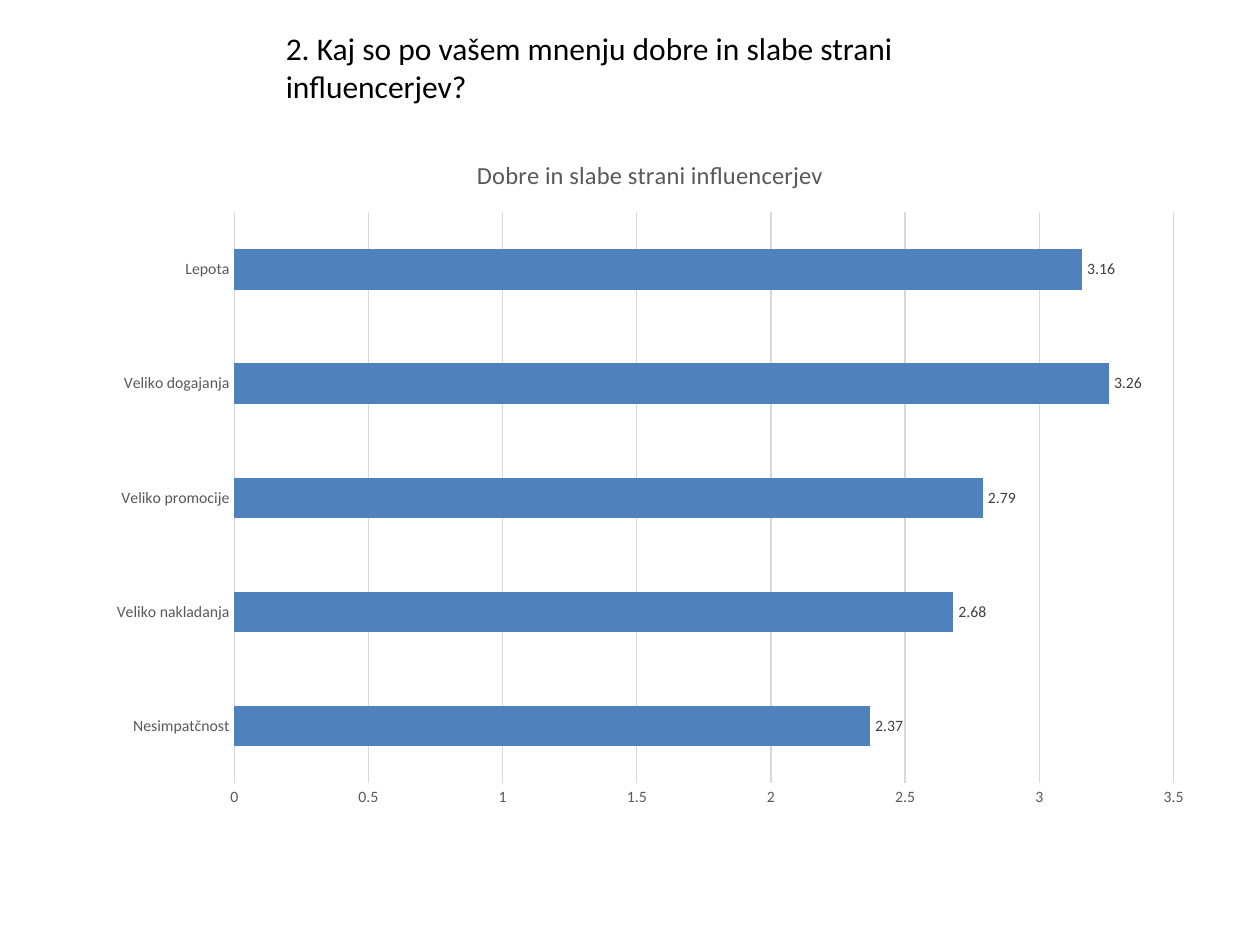
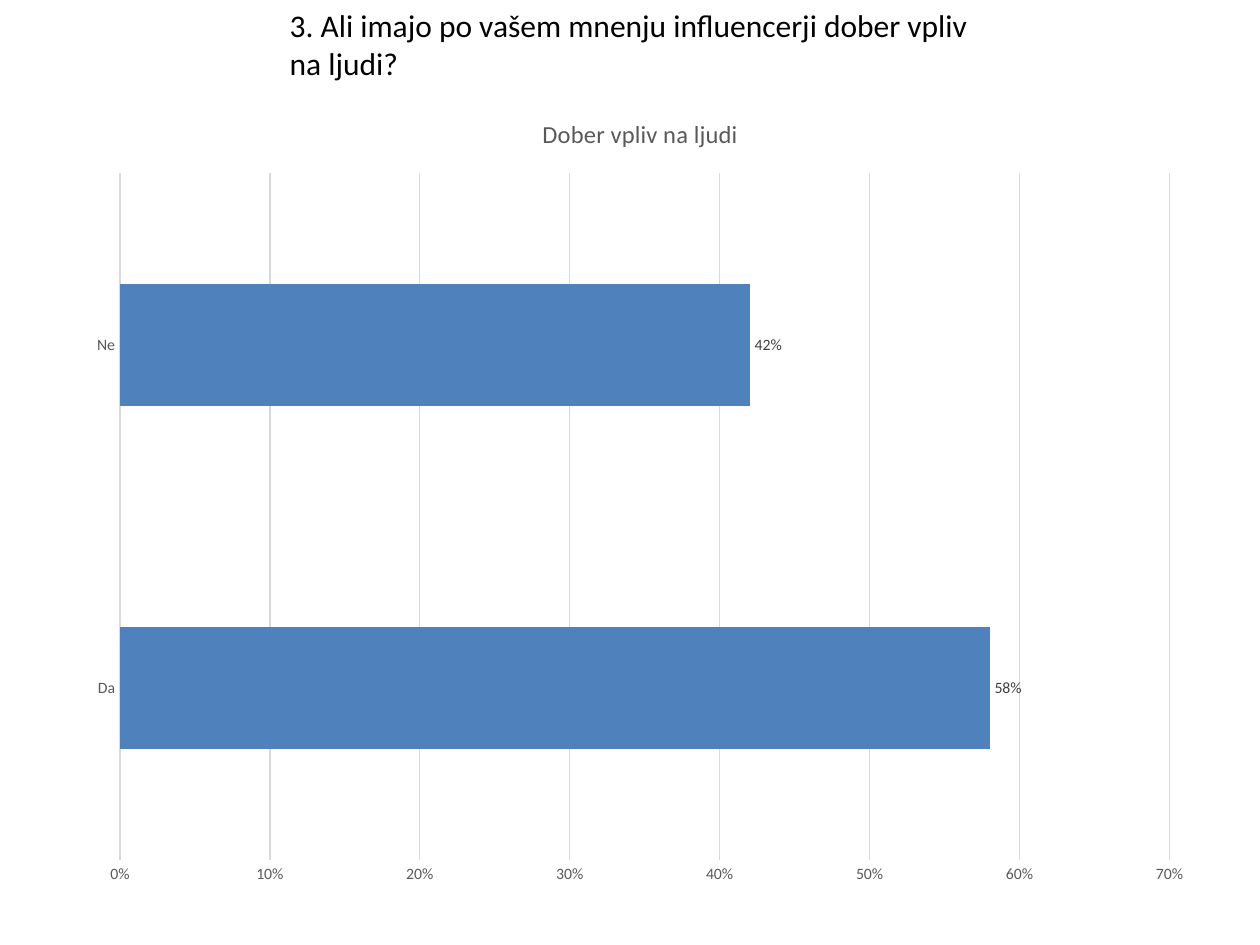
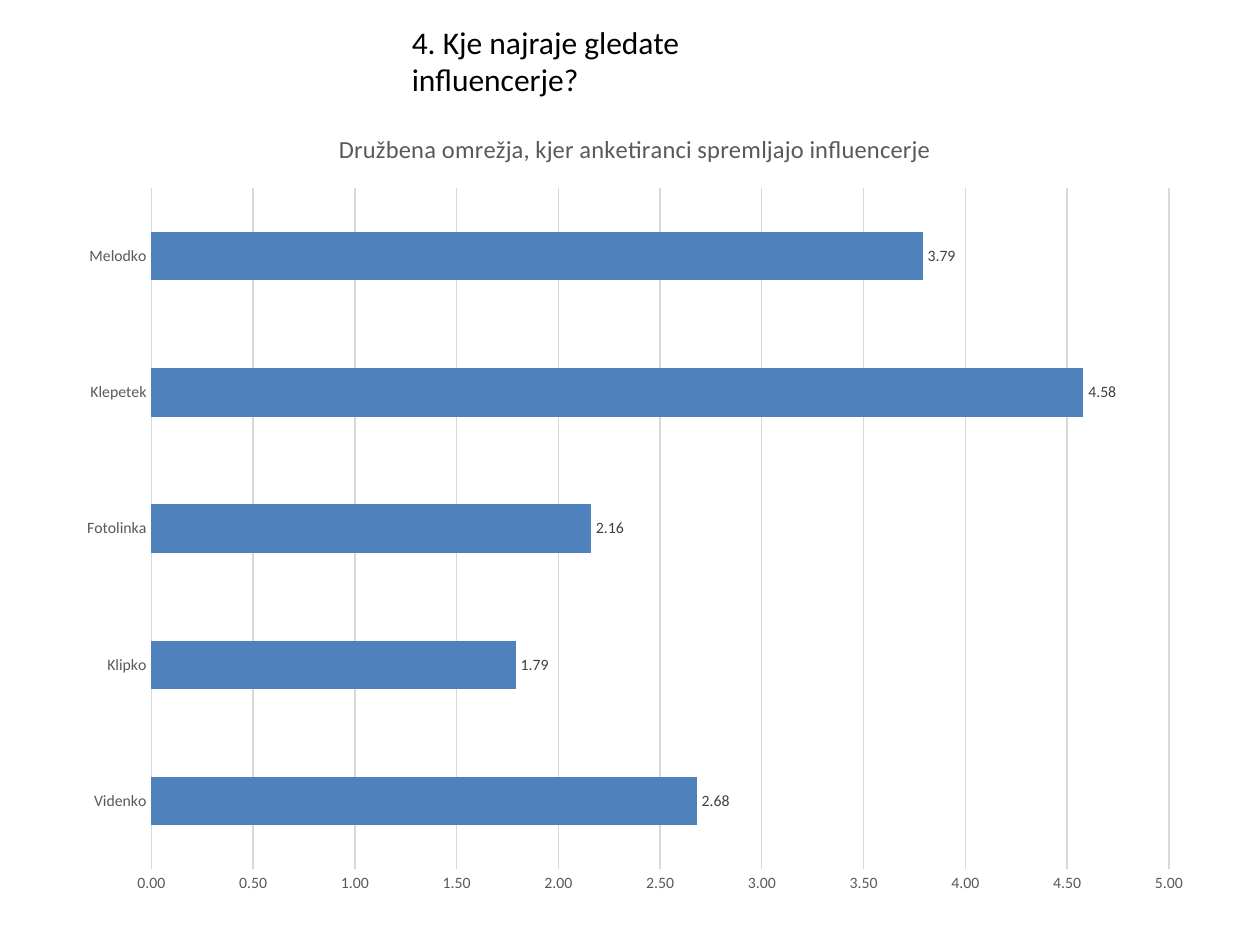
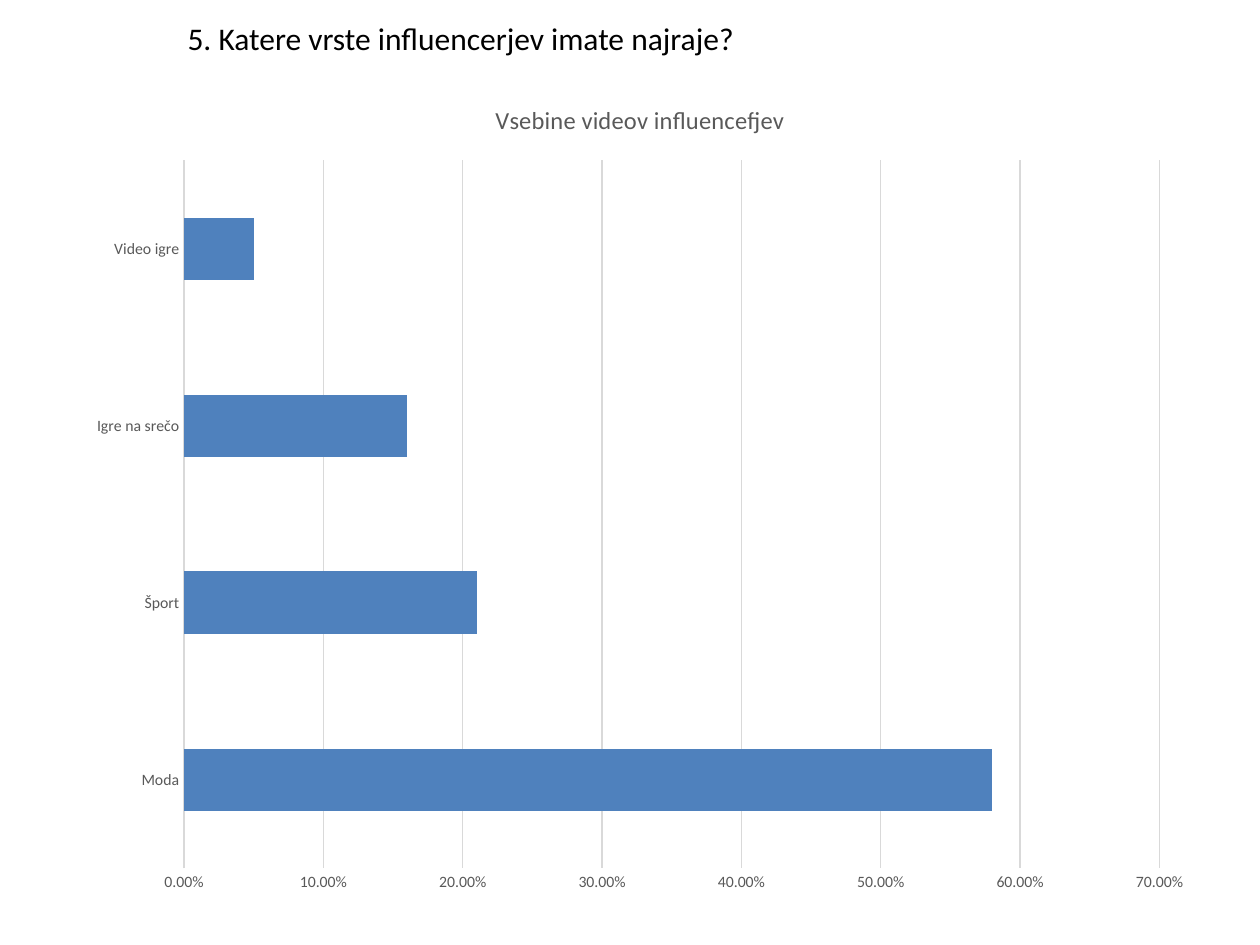
import dataclasses

import pptx
import pptx.chart.data
import pptx.dml.color
import pptx.enum.chart
import pptx.util

Inches = pptx.util.Inches
Pt = pptx.util.Pt
RGB = pptx.dml.color.RGBColor


@dataclasses.dataclass(frozen=True)
class Theme:
    font: str = "Calibri"
    ink: str = "000000"
    muted: str = "595959"
    label: str = "404040"
    grid: str = "D9D9D9"
    bar: str = "4F81BD"
    question_size: int = 18
    title_size: int = 14
    base_size: int = 10
    small_size: int = 9
    line_width: float = 0.75
    gap_width: int = 182


THEME = Theme()

# One entry per survey question; boxes are left, top, width, height in inches
QUESTIONS = [
    dict(
        question="2. Kaj so po vašem mnenju dobre in slabe strani influencerjev?",
        question_box=(2.17, 0.18, 6.06, 0.71),
        title="Dobre in slabe strani influencerjev",
        chart_box=(0.75, 1.06, 8.82, 5.45),
        answers={"Nesimpatčnost": 2.37, "Veliko nakladanja": 2.68,
                 "Veliko promocije": 2.79, "Veliko dogajanja": 3.26,
                 "Lepota": 3.16},
        scale=(3.5, 0.5), number_format="General",
    ),
    dict(
        question="3. Ali imajo po vašem mnenju influencerji dober vpliv na ljudi?",
        question_box=(2.2, 0, 5.59, 0.71),
        title="Dober vpliv na ljudi",
        chart_box=(0.59, 0.71, 8.98, 6.43),
        answers={"Da": 0.58, "Ne": 0.42},
        scale=(0.7, 0.1), number_format="0%",
    ),
    dict(
        question="4. Kje najraje gledate influencerje?",
        question_box=(3.17, 0.13, 3.66, 0.71),
        title="Družbena omrežja, kjer anketiranci spremljajo influencerje",
        chart_box=(0.51, 0.83, 9.06, 6.38),
        answers={"Videnko": 2.68, "Klipko": 1.79, "Fotolinka": 2.16,
                 "Klepetek": 4.58, "Melodko": 3.79},
        scale=(5, 0.5), number_format="0.00",
    ),
    dict(
        question="5. Katere vrste influencerjev imate najraje?",
        question_box=(1.39, 0.1, 7.63, 0.4),
        title="Vsebine videov influencefjev",
        chart_box=(0.59, 0.6, 8.98, 6.61),
        answers={"Moda": 0.58, "Šport": 0.21, "Igre na srečo": 0.16,
                 "Video igre": 0.05},
        scale=(0.7, 0.1), number_format="0.00%", show_values=False,
    ),
]


def style_font(font, size, color):
    font.name = THEME.font
    font.size = Pt(size)
    font.bold = False
    font.color.rgb = RGB.from_string(color)


def style_line(line):
    line.color.rgb = RGB.from_string(THEME.grid)
    line.width = Pt(THEME.line_width)


def add_question(s, text, box):
    tf = s.shapes.add_textbox(*map(Inches, box)).text_frame
    tf.word_wrap = True
    r = tf.paragraphs[0].add_run()
    r.text = text
    style_font(r.font, THEME.question_size, THEME.ink)


def style_axis(axis):
    axis.major_tick_mark = pptx.enum.chart.XL_TICK_MARK.NONE
    axis.minor_tick_mark = pptx.enum.chart.XL_TICK_MARK.NONE
    style_font(axis.tick_labels.font, THEME.small_size, THEME.muted)


def style_axes(chart, scale, number_format):
    categories, values = chart.category_axis, chart.value_axis
    style_axis(categories)
    style_line(categories.format.line)
    style_axis(values)
    values.format.line.fill.background()
    values.has_major_gridlines = True
    style_line(values.major_gridlines.format.line)
    values.minimum_scale = 0
    values.maximum_scale, values.major_unit = scale
    values.tick_labels.number_format = number_format
    values.tick_labels.number_format_is_linked = False


def add_value_labels(series, number_format):
    labels = series.data_labels
    labels.show_value = True
    labels.position = pptx.enum.chart.XL_LABEL_POSITION.OUTSIDE_END
    labels.number_format = number_format
    labels.number_format_is_linked = False
    style_font(labels.font, THEME.small_size, THEME.label)


def add_bar_chart(s, title, box, answers, scale, number_format, show_values):
    data = pptx.chart.data.CategoryChartData(number_format=number_format)
    data.categories = list(answers)
    data.add_series("Series 1", list(answers.values()))
    chart = s.shapes.add_chart(
        pptx.enum.chart.XL_CHART_TYPE.BAR_CLUSTERED, *map(Inches, box), data
    ).chart
    style_font(chart.font, THEME.base_size, THEME.ink)
    chart.has_legend = False

    # Chart title
    chart.has_title = True
    chart.chart_title.include_in_layout = False
    r = chart.chart_title.text_frame.paragraphs[0].add_run()
    r.text = title
    style_font(r.font, THEME.title_size, THEME.muted)

    # Axes and bars
    style_axes(chart, scale, number_format)
    plot = chart.plots[0]
    plot.gap_width = THEME.gap_width
    plot.vary_by_categories = False
    series = plot.series[0]
    series.format.fill.solid()
    series.format.fill.fore_color.rgb = RGB.from_string(THEME.bar)
    if show_values:
        add_value_labels(series, number_format)


def add_survey_slide(prs, question, question_box, title, chart_box, answers,
                     scale, number_format, show_values=True):
    s = prs.slides.add_slide(prs.slide_layouts[6])
    add_question(s, question, question_box)
    add_bar_chart(s, title, chart_box, answers, scale, number_format, show_values)


def main():
    prs = pptx.Presentation()
    prs.slide_width = Inches(10)
    prs.slide_height = Inches(7.5)
    for entry in QUESTIONS:
        add_survey_slide(prs, **entry)
    prs.save("out.pptx")


if __name__ == "__main__":
    main()
